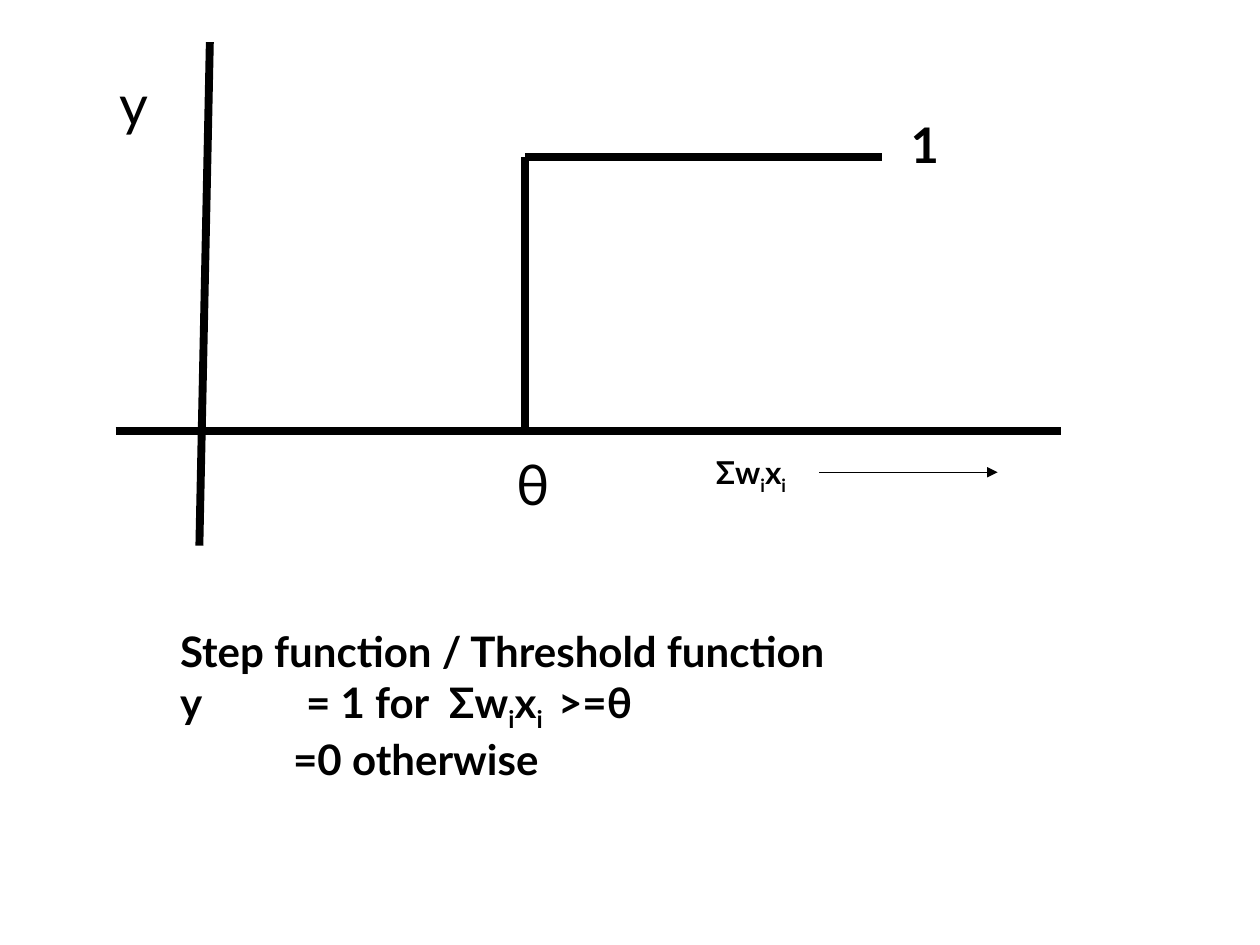
from dataclasses import dataclass

from lxml.etree import Element, SubElement
from pptx import Presentation
from pptx.dml.color import RGBColor
from pptx.enum.shapes import MSO_CONNECTOR
from pptx.enum.text import MSO_AUTO_SIZE, PP_ALIGN
from pptx.oxml.ns import qn
from pptx.slide import Slide
from pptx.util import Cm, Pt

COLOURS = {"ink": "000000", "background": "FFFFFF"}
FONT = "Lato"

# Shared positions of the graph, in centimetres
AXIS_Y = 8.68
THRESHOLD_X = 10.58
STEP_Y = 3.17

# Text pieces: (text, is subscript)
WEIGHTED_SUM = [("Σw", False), ("i", True), ("x", False), ("i", True)]


@dataclass
class Line:
    start: tuple[float, float]
    end: tuple[float, float]
    width: float = 4.5
    arrow: bool = False


@dataclass
class Label:
    box: tuple[float, float, float, float]
    paragraphs: list[list[tuple[str, bool]]]
    size: int
    bold: bool = False
    centred: bool = True
    wrap: bool = False
    last_indent: float = 0
    tab_stops: tuple[float, ...] = ()


LINES = [
    Line((4.23, 0.85), (4.02, 11.0)),  # y axis
    Line((2.33, AXIS_Y), (21.38, AXIS_Y)),  # x axis
    Line((THRESHOLD_X, STEP_Y), (THRESHOLD_X, AXIS_Y)),  # step riser
    Line((THRESHOLD_X, STEP_Y), (17.78, STEP_Y)),  # step top
    Line((16.51, 9.52), (20.11, 9.52), width=0.75, arrow=True),
]

LABELS = [
    Label((10.16, 8.94, 1.14, 1.6), [[("θ", False)]], 32),
    Label((18.11, 2.19, 1.07, 1.45), [[("1", False)]], 28, bold=True),
    Label((2.15, 1.27, 1.07, 1.6), [[("y", False)]], 32),
    Label(
        (3.38, 12.49, 15.88, 4.32),
        [
            [("Step function / Threshold function", False)],
            [("y \t= 1 for  ", False), *WEIGHTED_SUM, ("\t>=θ", False)],
            [("=0 otherwise", False)],
        ],
        24, bold=True, centred=False, wrap=True,
        last_indent=2.28, tab_stops=(2.54, 7.62),
    ),
    Label((14.18, 9.01, 2.34, 1.02), [WEIGHTED_SUM], 18,
          bold=True, centred=False),
]


def draw_line(slide: Slide, line: Line) -> None:
    connector = slide.shapes.add_connector(
        MSO_CONNECTOR.STRAIGHT, *map(Cm, line.start + line.end))
    connector.line.width = Pt(line.width)
    connector.line.color.rgb = RGBColor.from_string(COLOURS["ink"])
    if line.arrow:
        SubElement(connector.line._get_or_add_ln(), qn("a:tailEnd"), type="triangle")
    SubElement(connector._element.spPr, qn("a:effectLst"))


def draw_label(slide: Slide, label: Label) -> None:
    frame = slide.shapes.add_textbox(*map(Cm, label.box)).text_frame
    frame.word_wrap = label.wrap
    frame.auto_size = MSO_AUTO_SIZE.SHAPE_TO_FIT_TEXT
    for index, pieces in enumerate(label.paragraphs):
        paragraph = frame.add_paragraph() if index else frame.paragraphs[0]
        paragraph.alignment = PP_ALIGN.CENTER if label.centred else PP_ALIGN.LEFT
        paragraph.font.name = FONT
        paragraph.font.size = Pt(label.size)
        paragraph.font.bold = label.bold
        paragraph.font.color.rgb = RGBColor.from_string(COLOURS["ink"])
        properties = paragraph._p.get_or_add_pPr()
        if label.tab_stops:
            tab_list = Element(qn("a:tabLst"))
            for stop in label.tab_stops:
                SubElement(tab_list, qn("a:tab"), pos=str(Cm(stop)), algn="l")
            properties.insert(0, tab_list)
        for text, is_subscript in pieces:
            run = paragraph.add_run()
            run.text = text
            if is_subscript:
                run._r.get_or_add_rPr().set("baseline", "-25000")
    if label.last_indent:
        properties.set("marL", str(Cm(label.last_indent)))
        properties.set("indent", "0")


def main() -> None:
    presentation = Presentation()
    presentation.slide_width, presentation.slide_height = Cm(25.4), Cm(19.05)
    slide = presentation.slides.add_slide(presentation.slide_layouts[6])
    background = slide.background.fill
    background.solid()
    background.fore_color.rgb = RGBColor.from_string(COLOURS["background"])

    # Axes, step and direction arrow
    for line in LINES:
        draw_line(slide, line)

    # Axis labels and the function's definition
    for label in LABELS:
        draw_label(slide, label)

    presentation.save("out.pptx")


if __name__ == "__main__":
    main()
